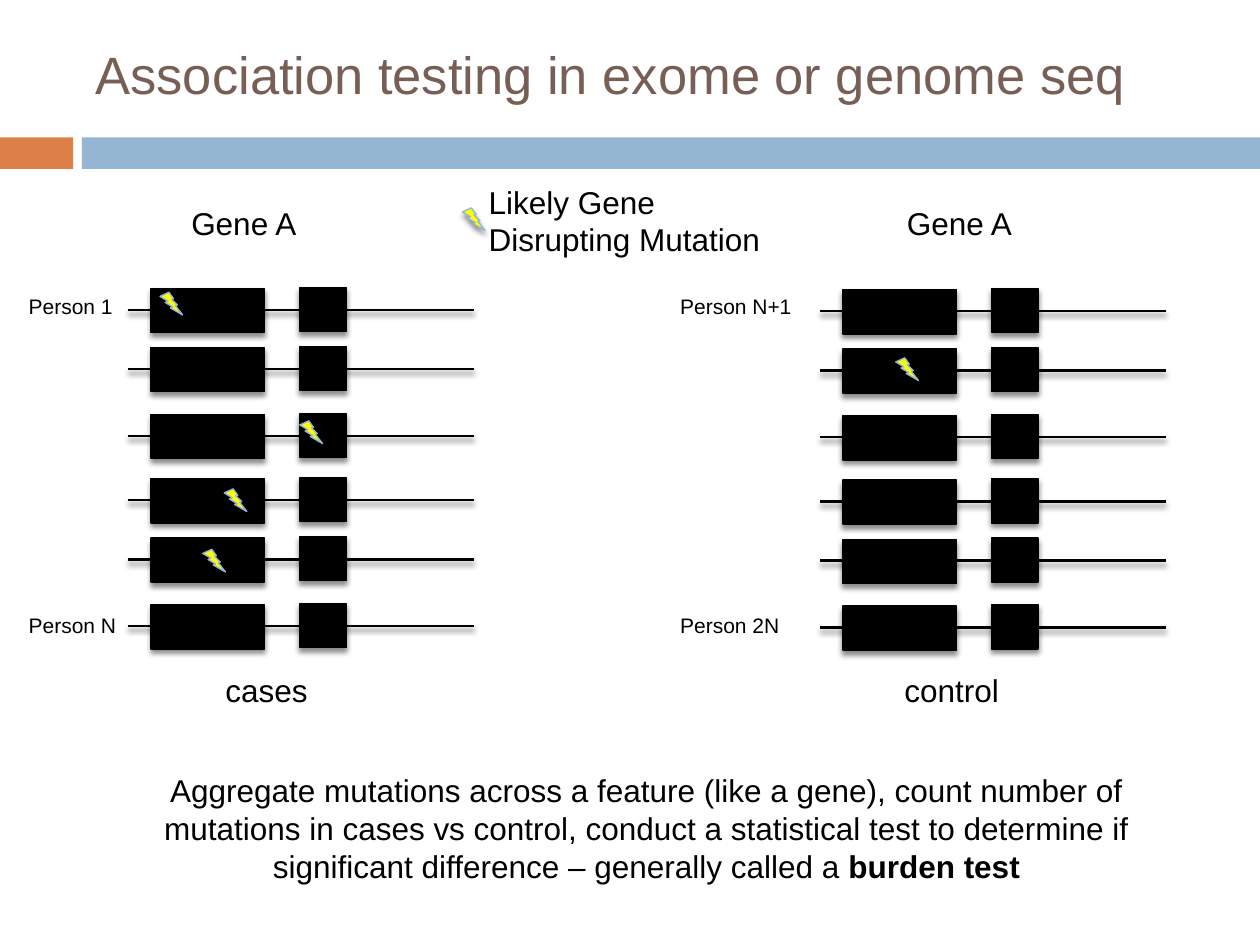
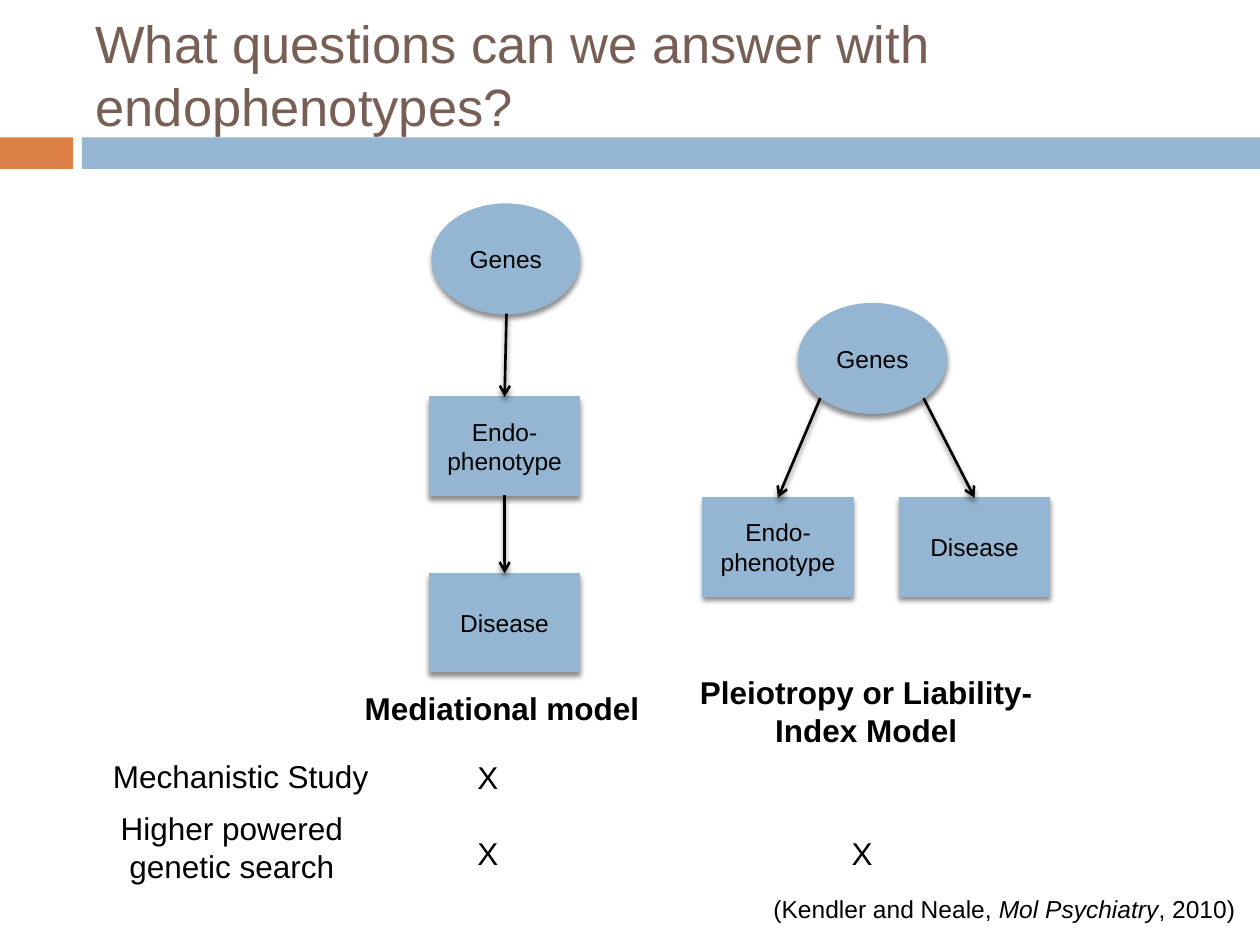
from lxml import etree
from pptx import Presentation
from pptx.dml.color import RGBColor
from pptx.enum import shapes as es, text as et
from pptx.oxml import parse_xml
from pptx.oxml.ns import nsdecls, qn
from pptx.util import Inches, Pt

BLACK, BLUE, ORANGE = "000000", "94B6D2", "DD8047"
BROWN, YELLOW = "775F55", "FFFF00"
SHADOW = (
    f'<a:effectLst {nsdecls("a")}>'
    '<a:outerShdw blurRad="38100" dist="30000" dir="5400000" rotWithShape="0">'
    '<a:srgbClr val="000000"><a:alpha val="45000"/></a:srgbClr>'
    '</a:outerShdw></a:effectLst>'
)
KIND = es.MSO_SHAPE
MID = et.MSO_ANCHOR.MIDDLE
LEFT, CENTER = et.PP_ALIGN.LEFT, et.PP_ALIGN.CENTER


def color(code):
    return RGBColor.from_string(code)


class Deck:
    def __init__(self):
        self.prs = Presentation()
        self.prs.slide_width, self.prs.slide_height = Inches(10), Inches(7.5)
        self.page = None
        self.items = None

    def slide(self, title):
        self.page = self.prs.slides.add_slide(self.prs.slide_layouts[6])
        self.items = self.page.shapes
        self.shape(KIND.RECTANGLE, 0, 1.09, 0.58, 0.25, ORANGE)
        self.shape(KIND.RECTANGLE, 0.65, 1.09, 9.35, 0.25, BLUE)
        self.text(title, 0.66, -0.04, 9, 1.25, size=30, tint=BROWN, anchor=MID)

    def group(self):
        self.items = self.page.shapes.add_group_shape().shapes

    def ungroup(self):
        self.items = self.page.shapes

    def shape(self, kind, x, y, w, h, fill, line=None):
        """Flat shape, or an outlined one with a soft shadow."""
        item = self.items.add_shape(kind, Inches(x), Inches(y), Inches(w), Inches(h))
        item.shadow.inherit = False
        item.fill.solid()
        item.fill.fore_color.rgb = color(fill)
        if line:
            item.line.color.rgb = color(line)
            item.line.width = Pt(0.79)
            self.shade(item)
        else:
            item.line.fill.background()
        return item

    def shade(self, item):
        props = item._element.spPr
        for old in props.findall(qn("a:effectLst")):
            props.remove(old)
        props.append(parse_xml(SHADOW))

    def label(self, frame, runs, size, tint=BLACK, align=LEFT, bold=False):
        """Fill a frame; runs is a string or (words, style) pairs."""
        para = frame.paragraphs[0]
        para.alignment = align
        font = para.font
        font.name, font.size, font.bold = "Arial", Pt(size), bold
        font.color.rgb = color(tint)
        for words, style in [(runs, "")] if isinstance(runs, str) else runs:
            run = para.add_run()
            run.text = words
            if style == "b":
                run.font.bold = True
            elif style == "i":
                run.font.italic = True

    def text(self, runs, x, y, w, h=0.4, size=18, anchor=et.MSO_ANCHOR.TOP,
             wrap=True, **style):
        box = self.items.add_textbox(Inches(x), Inches(y), Inches(w), Inches(h))
        frame = box.text_frame
        frame.word_wrap, frame.vertical_anchor = wrap, anchor
        self.label(frame, runs, size, **style)

    def node(self, name, x, y, kind=KIND.RECTANGLE, w=1.19, h=0.78):
        item = self.shape(kind, x, y, w, h, BLUE, BLUE)
        item.text_frame.word_wrap = True
        item.text_frame.vertical_anchor = MID
        self.label(item.text_frame, name, 14, align=CENTER)
        return item

    def oval(self, name, x, y):
        return self.node(name, x, y, KIND.OVAL, 1.17, 0.87)

    def bolt(self, x, y):
        self.shape(KIND.LIGHTNING_BOLT, x, y, 0.18, 0.18, YELLOW, BLUE)

    def line(self, x1, y1, x2, y2, start=None, end=None, arrow=False):
        """Line that may leave a box bottom and reach a box top."""
        item = self.items.add_connector(
            es.MSO_CONNECTOR.STRAIGHT, Inches(x1), Inches(y1), Inches(x2), Inches(y2))
        if start:
            item.begin_connect(start, 2)
        if end:
            item.end_connect(end, 0)
        item.line.color.rgb = color(BLACK)
        item.line.width = Pt(1.5)
        if arrow:
            stroke = item._element.spPr.find(qn("a:ln"))
            etree.SubElement(stroke, qn("a:tailEnd"), type="arrow")
        self.shade(item)


def burden(deck):
    deck.slide("Association testing in exome or genome seq")

    # Six gene rows for each cohort: line, long exon, short exon
    rows = [base + step for base in (2.29, 3.8) for step in (0, 0.47, 1)]
    for x, drop in ((1.02, 0), (6.51, 0.01)):
        for row in rows:
            y = row + drop
            deck.line(x, y + 0.17, x + 2.74, y + 0.17)
            deck.shape(KIND.RECTANGLE, x + 0.18, y, 0.9, 0.35, BLACK, BLACK)
            deck.shape(KIND.RECTANGLE, x + 1.36, y - 0.01, 0.37, 0.35, BLACK, BLACK)

    # Mutations, the first one being the legend key
    for x, y in ((3.67, 1.65), (1.27, 2.32), (2.38, 3.34), (1.78, 3.88),
                 (1.61, 4.36), (7.11, 2.84)):
        deck.bolt(x, y)
    deck.text("Likely Gene Disrupting Mutation", 3.78, 1.4, 2.45, 0.71)

    # Cohort labels
    for x in (1.42, 7.1):
        deck.text("Gene A", x, 1.57, 1.36)
    deck.text("cases", 1.69, 5.28, 0.95)
    deck.text("control", 7.08, 5.28, 1.16)
    for x, w, first, last in ((0.13, 0.9, "Person 1", "Person N"),
                              (5.3, 1.1, "Person N+1", "Person 2N")):
        deck.text(first, x, 2.28, w, 0.3, size=12)
        deck.text(last, x, 4.81, w, 0.3, size=12)

    # Summary
    deck.text([("Aggregate mutations across a feature (like a gene), count number of "
                "mutations in cases vs control, conduct a statistical test to determine "
                "if significant difference – generally called a ", ""),
               ("burden test", "b")], 1.02, 6.07, 8.22, 1.01, align=CENTER)


def models(deck):
    deck.slide("What questions can we answer with endophenotypes?")

    # Pleiotropy model
    deck.group()
    deck.oval("Genes", 6.34, 2.41)
    endo = deck.node("Endo-phenotype", 5.58, 3.95)
    ill = deck.node("Disease", 7.14, 3.95)
    deck.line(6.51, 3.16, 6.18, 3.95, end=endo, arrow=True)
    deck.line(7.33, 3.16, 7.73, 3.95, end=ill, arrow=True)

    # Mediational model
    deck.group()
    deck.oval("Genes", 3.43, 1.62)
    endo = deck.node("Endo-phenotype", 3.41, 3.15)
    deck.line(4.02, 2.49, 4.01, 3.15, end=endo, arrow=True)
    ill = deck.node("Disease", 3.41, 4.55)
    deck.line(4.01, 3.93, 4.01, 4.55, start=endo, end=ill, arrow=True)
    deck.ungroup()

    # Which model answers which question
    deck.text("Mediational model", 2.56, 5.42, 2.85, align=CENTER, bold=True)
    deck.text("Pleiotropy or Liability-Index Model", 5.29, 5.29, 3.17, 0.71,
              align=CENTER, bold=True)
    deck.text("Mechanistic Study", 0.67, 5.96, 2.48, align=CENTER)
    deck.text("Higher powered genetic search", 0.6, 6.37, 2.48, 0.71, align=CENTER)
    for x, y in ((3.69, 5.97), (3.69, 6.57), (6.66, 6.57)):
        deck.text("X", x, y, 0.48)

    # Citation
    deck.text([("(Kendler and Neale, ", ""), ("Mol Psychiatry", "i"), (", 2010)", "")],
              6.04, 7.05, 3.88, 0.34, size=14, wrap=False)


def main():
    deck = Deck()
    burden(deck)
    models(deck)
    deck.prs.save("out.pptx")


if __name__ == "__main__":
    main()
